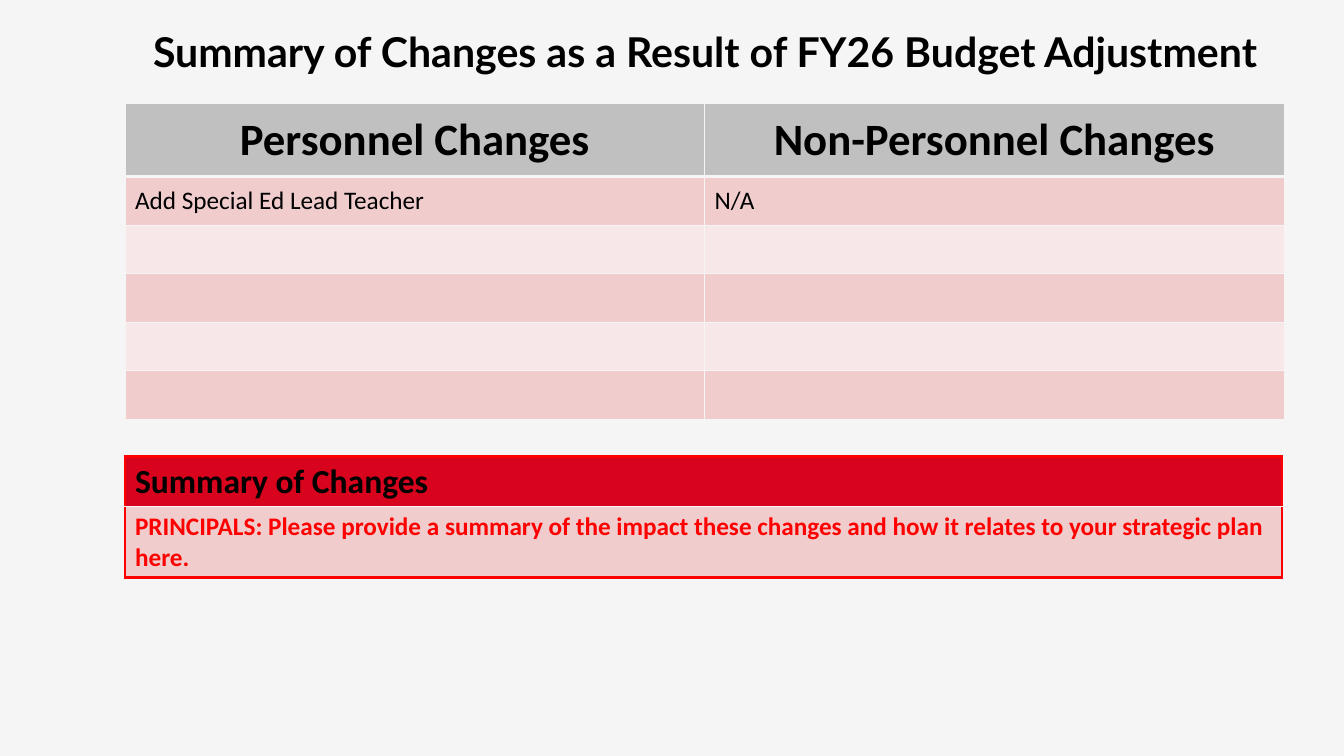
from lxml import etree
from pptx import Presentation
from pptx.dml.color import RGBColor
from pptx.enum.text import MSO_ANCHOR, PP_ALIGN
from pptx.oxml.ns import qn
from pptx.util import Inches, Pt

CENTER, LEFT = PP_ALIGN.CENTER, PP_ALIGN.LEFT
MIDDLE, TOP = MSO_ANCHOR.MIDDLE, MSO_ANCHOR.TOP
WIDTH, HEIGHT = Inches(20), Inches(11.25)
COLORS = {
    "background": "F5F5F5", "text": "000000", "gray": "C0C0C0",
    "band": "F0CCCD", "pale": "F8E7E8", "crimson": "D8031C", "red": "FF0000",
}
CELL_INSETS = {"margin_left": Inches(0.15), "margin_right": Inches(0.15),
               "margin_top": Inches(0.07), "margin_bottom": Inches(0.07)}
THIN, RULE, FRAME = ("background", 1), ("background", 3), ("red", 3)
GRID = {"L": THIN, "R": THIN, "T": THIN, "B": THIN}

# Left, top, width and height as percentages of the slide
TITLE_BOX = (7.5, 3.02, 90, 12.18)
CHANGES_BOX = (9.3, 13.69, 86.25, 41.78)
SUMMARY_BOX = (9.3, 60.36, 86.1, 16)


def rgb(name):
    return RGBColor.from_string(COLORS[name])


def place(box):
    left, top, width, height = box
    return (int(WIDTH * left / 100), int(HEIGHT * top / 100),
            int(WIDTH * width / 100), int(HEIGHT * height / 100))


def write(text_frame, text, size, color="text", bold=True, font="Calibri", align=LEFT):
    paragraph = text_frame.paragraphs[0]
    paragraph.text = text
    paragraph.alignment = align
    values = {"name": font, "size": Pt(size), "bold": bold}
    for name, value in values.items():
        setattr(paragraph.font, name, value)
    paragraph.font.color.rgb = rgb(color)


def format_cell(cell, fill, borders, anchor):
    for name, value in {**CELL_INSETS, "vertical_anchor": anchor}.items():
        setattr(cell, name, value)
    # Borders come before the fill in the cell properties
    properties = cell._tc.get_or_add_tcPr()
    for side in "LRTB":
        color, points = borders[side]
        line = etree.SubElement(properties, qn(f"a:ln{side}"), w=str(Pt(points)))
        solid = etree.SubElement(line, qn("a:solidFill"))
        etree.SubElement(solid, qn("a:srgbClr"), val=COLORS[color])
    cell.fill.solid()
    cell.fill.fore_color.rgb = rgb(fill)


def add_grid(slide, box, column_count, row_shares):
    left, top, width, height = place(box)
    table = slide.shapes.add_table(
        len(row_shares), column_count, left, top, width, height).table
    for row, share in zip(table.rows, row_shares):
        row.height = int(height * share / sum(row_shares))
    return table


def add_title(slide, box):
    text_frame = slide.shapes.add_textbox(*place(box)).text_frame
    text_frame.word_wrap = True
    write(text_frame, "Summary of Changes as a Result of FY26 Budget Adjustment",
          44, font="Lato", align=CENTER)


def add_changes_table(slide, box):
    headings = ("Personnel Changes", "Non-Personnel Changes")
    entries = ("Add Special Ed Lead Teacher", "N/A")
    table = add_grid(slide, box, len(headings), [1.5] + [1] * 5)
    for column, (heading, entry) in enumerate(zip(headings, entries)):
        for row in range(len(table.rows)):
            fill = "gray" if row == 0 else "band" if row % 2 else "pale"
            borders = dict(GRID)
            if row < 2:
                borders["T" if row else "B"] = RULE
            format_cell(table.cell(row, column), fill, borders, MIDDLE)
        write(table.cell(0, column).text_frame, heading, 48, align=CENTER)
        write(table.cell(1, column).text_frame, entry, 27, bold=False)


def add_summary_table(slide, box):
    rows = (
        ("Summary of Changes", 36, "text", "crimson", {"T": FRAME, "B": THIN}),
        ("PRINCIPALS: Please provide a summary of the impact these changes "
         "and how it relates to your strategic plan here.",
         27, "red", "band", {"T": THIN, "B": FRAME}),
    )
    table = add_grid(slide, box, 1, [5, 7])
    for row, (text, size, color, fill, edges) in enumerate(rows):
        cell = table.cell(row, 0)
        format_cell(cell, fill, {"L": FRAME, "R": FRAME, **edges}, TOP)
        write(cell.text_frame, text, size, color)


def main():
    presentation = Presentation()
    presentation.slide_width, presentation.slide_height = WIDTH, HEIGHT
    slide = presentation.slides.add_slide(presentation.slide_layouts[6])
    slide.background.fill.solid()
    slide.background.fill.fore_color.rgb = rgb("background")
    add_title(slide, TITLE_BOX)
    add_changes_table(slide, CHANGES_BOX)
    add_summary_table(slide, SUMMARY_BOX)
    presentation.save("out.pptx")


if __name__ == "__main__":
    main()
